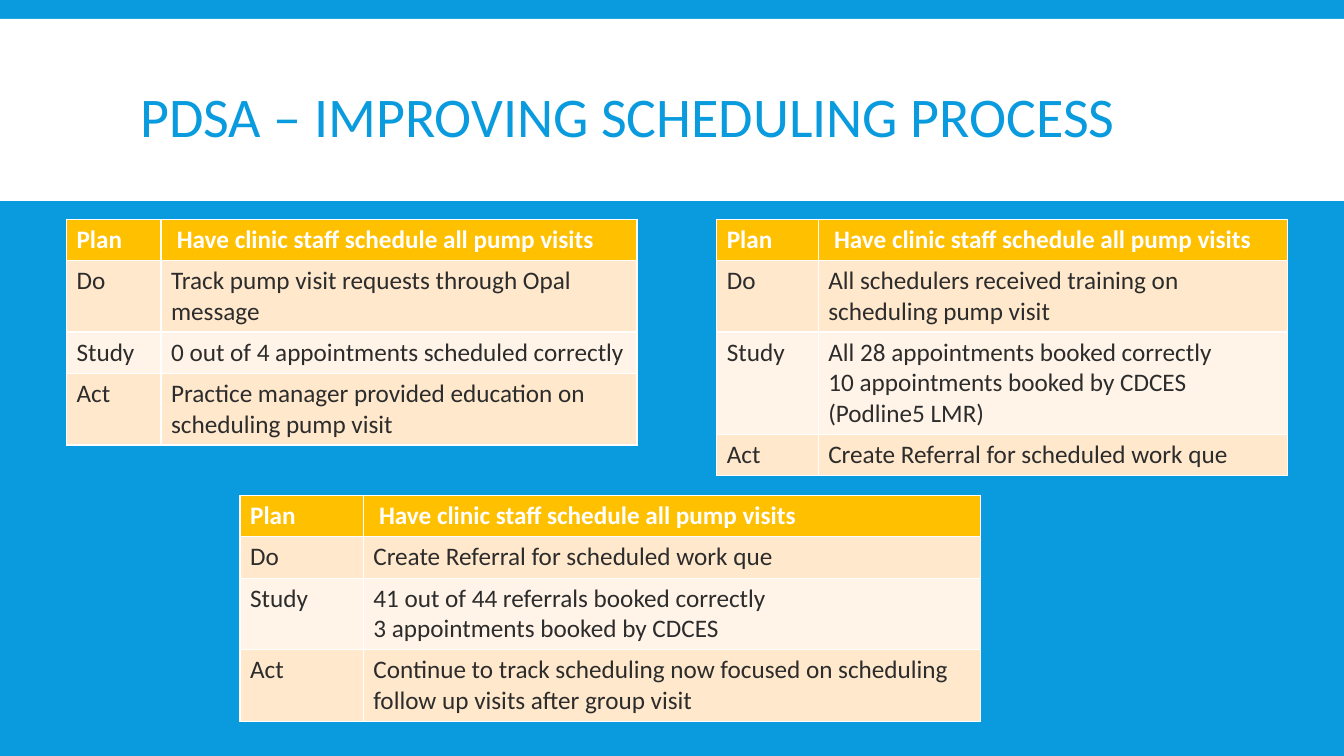
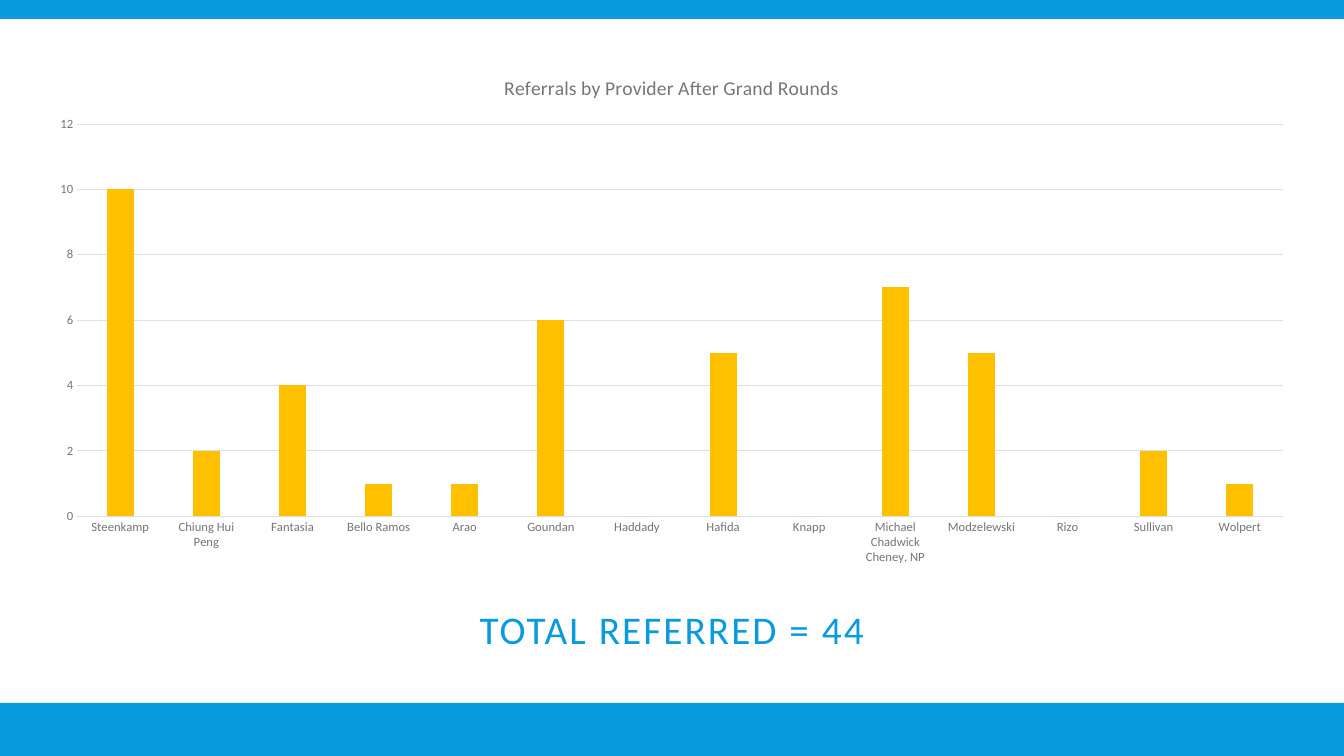
import pptx
import pptx.util
import pptx.dml.color
import pptx.chart.data
import pptx.enum.chart
import pptx.enum.shapes
import pptx.enum.text

Pt = pptx.util.Pt
Align = pptx.enum.text.PP_ALIGN
Anchor = pptx.enum.text.MSO_ANCHOR
rgb = pptx.dml.color.RGBColor.from_string

# Shared look
FONT = "Calibri"
BLUE, GOLD, WHITE = "099BDD", "FFC000", "FFFFFF"
DARK, GREY, PALE = "2C2C2C", "767676", "DFDFDF"
ROWS = [GOLD, "FFE8CC", "FFF4E7", "FFE8CC"]
WIDE, HIGH = 960, 540

deck = pptx.Presentation()
deck.slide_width, deck.slide_height = Pt(WIDE), Pt(HIGH)


def style(font, size, color, bold=False):
    font.name, font.size, font.bold = FONT, Pt(size), bold
    font.color.rgb = rgb(color)


def page(back, bands, text, box, size, align, anchor, lead):
    """Add a slide with full-width bands behind its title."""
    slide = deck.slides.add_slide(deck.slide_layouts[5])
    slide.background.fill.solid()
    slide.background.fill.fore_color.rgb = rgb(back)
    for top, height, color in bands:
        band = slide.shapes.add_shape(
            pptx.enum.shapes.MSO_SHAPE.RECTANGLE, 0, Pt(top), Pt(WIDE), Pt(height))
        band.shadow.inherit = False
        band.fill.solid()
        band.fill.fore_color.rgb = rgb(color)
        band.line.fill.background()
        slide.shapes.element.insert(2, band.element)
    title = slide.shapes.title
    title.left, title.top, title.width, title.height = map(Pt, box)
    frame = title.text_frame
    frame.text = text
    frame.word_wrap = True
    frame.auto_size = pptx.enum.text.MSO_AUTO_SIZE.NONE
    frame.vertical_anchor = anchor
    para = frame.paragraphs[0]
    para.alignment, para.line_spacing = align, lead
    style(para.font, size, BLUE)
    return slide


# Slide 1: three improvement cycles
slide = page(BLUE, [(13.5, 130, WHITE)], "PDSA – IMPROVING SCHEDULING PROCESS",
             (93, 26.5, 793, 119), 40, Align.LEFT, Anchor.MIDDLE, 0.85)

STEPS = ["Plan", "Do", "Study", "Act"]
PLAN = " Have clinic staff schedule all pump visits"
ROW = 29.5
cycles = [
    (47.5, 156.5, (67.5, 340), [
        "Track pump visit requests through Opal message",
        "0 out of 4 appointments scheduled correctly",
        "Practice manager provided education on scheduling pump visit"]),
    (512, 156.5, (72.5, 335), [
        "All schedulers received training on scheduling pump visit",
        "All 28 appointments booked correctly\n"
        "10 appointments booked by CDCES (Podline5 LMR)",
        "Create Referral for scheduled work que"]),
    (171.5, 354, (88, 441), [
        "Create Referral for scheduled work que",
        "41 out of 44 referrals booked correctly\n3 appointments booked by CDCES",
        "Continue to track scheduling now focused on scheduling "
        "follow up visits after group visit"]),
]
for left, top, cols, notes in cycles:
    table = slide.shapes.add_table(
        len(STEPS), 2, Pt(left), Pt(top), Pt(sum(cols)), Pt(ROW * len(STEPS))).table
    for col, width in zip(table.columns, cols):
        col.width = Pt(width)
    for r, pair in enumerate(zip(STEPS, [PLAN] + notes)):
        for c, text in enumerate(pair):
            cell = table.cell(r, c)
            cell.text = text
            cell.fill.solid()
            cell.fill.fore_color.rgb = rgb(ROWS[r])
            for para in cell.text_frame.paragraphs:
                style(para.font, 18, DARK if r else WHITE, r == 0)

# Slide 2: referrals chart
slide = page(WHITE, [(0, 13.5, BLUE), (502, 38, BLUE)], "TOTAL REFERRED = 44",
             (50.5, 417.5, 859, 52), 28, Align.CENTER, Anchor.BOTTOM, 0.8)
run = slide.shapes.title.text_frame.paragraphs[0].runs[0]
run._r.get_or_add_rPr().set("spc", "150")  # letter spacing

counts = {
    "Steenkamp": 10, "Chiung Hui Peng": 2, "Fantasia": 4, "Bello Ramos": 1,
    "Arao": 1, "Goundan": 6, "Haddady": 0, "Hafida": 5, "Knapp": 0,
    "Michael Chadwick Cheney, NP": 7, "Modzelewski": 5, "Rizo": 0,
    "Sullivan": 2, "Wolpert": 1,
}
data = pptx.chart.data.CategoryChartData()
data.categories = list(counts)
data.add_series("Series 1", list(counts.values()))
chart = slide.shapes.add_chart(
    pptx.enum.chart.XL_CHART_TYPE.COLUMN_CLUSTERED,
    Pt(25), Pt(39), Pt(909.5), Pt(371.5), data).chart
style(chart.font, 10, DARK)
chart.has_legend = False
chart.has_title = True
head = chart.chart_title
head.include_in_layout = False
head.text_frame.text = "Referrals by Provider After Grand Rounds"
style(head.text_frame.paragraphs[0].font, 14, GREY)

# Bars
plot = chart.plots[0]
plot.gap_width, plot.overlap, plot.vary_by_categories = 219, -27, False
fill = plot.series[0].format.fill
fill.solid()
fill.fore_color.rgb = rgb(GOLD)

# Axes
names, scale = chart.category_axis, chart.value_axis
for axis in (names, scale):
    axis.major_tick_mark = pptx.enum.chart.XL_TICK_MARK.NONE
    style(axis.tick_labels.font, 9, GREY)
scale.minimum_scale, scale.maximum_scale, scale.major_unit = 0, 12, 2
scale.has_major_gridlines = True
scale.format.line.fill.background()
for line in (names.format.line, scale.major_gridlines.format.line):
    line.color.rgb = rgb(PALE)
    line.width = Pt(0.75)

deck.save("out.pptx")
